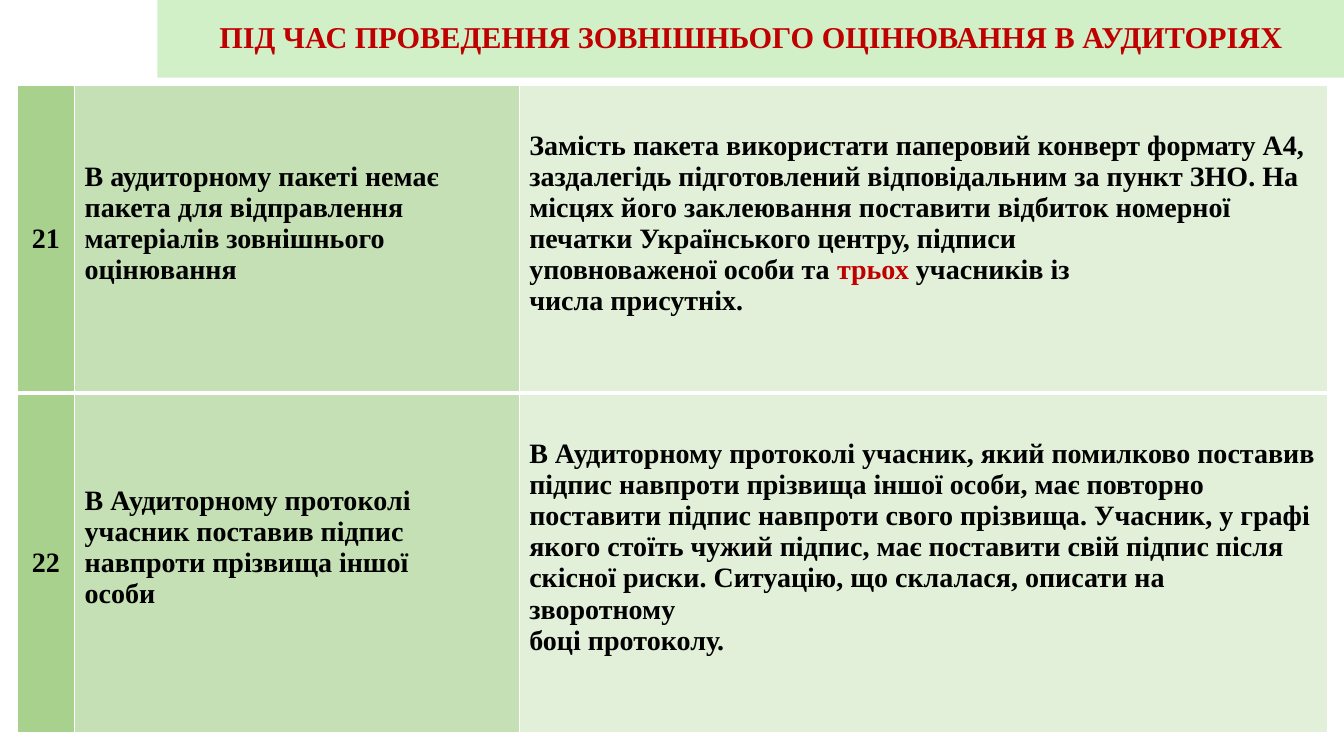
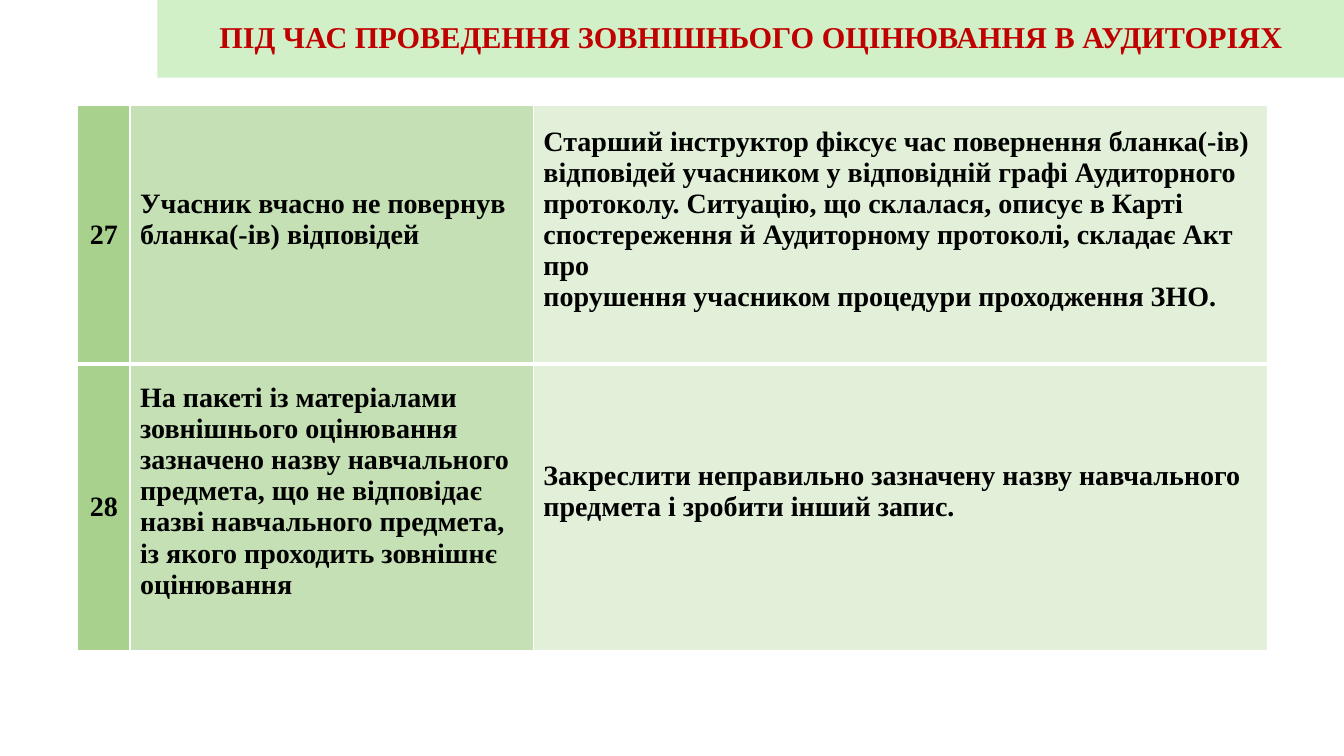
"""Build two slides of exam-room instructions as numbered tables."""
from dataclasses import dataclass

from pptx import Presentation
from pptx.dml.color import RGBColor
from pptx.enum.text import MSO_ANCHOR, MSO_AUTO_SIZE, PP_ALIGN
from pptx.oxml.ns import qn
from pptx.util import Inches, Pt
from lxml.etree import SubElement


@dataclass(frozen=True)
class Theme:
    font: str = "Times New Roman"
    title_size: float = 21.6
    body_size: float = 20
    text: str = "000000"
    accent: str = "C00000"
    band: str = "D1F0C8"
    columns: tuple = ("A9D18E", "C5E0B4", "E2F0D9")
    border: str = "FFFFFF"
    thin: float = 1
    thick: float = 3


THEME = Theme()
TITLE = "ПІД ЧАС ПРОВЕДЕННЯ ЗОВНІШНЬОГО ОЦІНЮВАННЯ В АУДИТОРІЯХ"
TITLE_BOX = (1.56, 0, 11.78, 0.77)
TEXT_BOTTOM_MARGIN = 0.36

# Every second span of a cell is emphasised.
PAGES = [
    {
        "origin": (0.17, 0.85),
        "widths": (0.57, 4.41, 8.02),
        "heights": (3.05, 3.37),
        "rows": [
            (
                ["21"],
                ["В аудиторному пакеті немає\nпакета для відправлення\n"
                 "матеріалів зовнішнього\nоцінювання"],
                ["Замість пакета використати паперовий конверт формату А4, "
                 "заздалегідь підготовлений відповідальним за пункт ЗНО. "
                 "На місцях його заклеювання поставити відбиток номерної "
                 "печатки Українського центру, підписи\n"
                 "уповноваженої особи та ",
                 "трьох ",
                 "учасників із\nчисла присутніх."],
            ),
            (
                ["22"],
                ["В Аудиторному протоколі\nучасник поставив підпис\n"
                 "навпроти прізвища іншої\nособи"],
                ["В Аудиторному протоколі учасник, який помилково поставив "
                 "підпис навпроти прізвища іншої особи, має повторно "
                 "поставити підпис навпроти свого прізвища. Учасник, у графі\n"
                 "якого стоїть чужий підпис, має поставити свій підпис після "
                 "скісної риски. Ситуацію, що склалася, описати на "
                 "зворотному\nбоці протоколу."],
            ),
        ],
    },
    {
        "origin": (0.77, 1.05),
        "widths": (0.52, 4, 7.28),
        "heights": (2.56, 2.84),
        "rows": [
            (
                ["27"],
                ["Учасник вчасно не повернув\nбланка(-ів) відповідей"],
                ["Старший інструктор фіксує час повернення бланка(-ів) "
                 "відповідей учасником у відповідній графі Аудиторного "
                 "протоколу. Ситуацію, що склалася, описує в Карті "
                 "спостереження й Аудиторному протоколі, складає Акт про\n"
                 "порушення учасником процедури проходження ЗНО."],
            ),
            (
                ["28"],
                ["На пакеті із матеріалами\nзовнішнього оцінювання\n"
                 "зазначено назву навчального\nпредмета, що не відповідає\n"
                 "назві навчального предмета, із якого проходить зовнішнє\n"
                 "оцінювання"],
                ["Закреслити неправильно зазначену назву навчального "
                 "предмета і зробити інший запис."],
            ),
        ],
    },
]


def paint(fill, color):
    fill.solid()
    fill.fore_color.rgb = RGBColor.from_string(color)


def style_span(span, size, color):
    span.font.name = THEME.font
    span.font.size = Pt(size)
    span.font.bold = True
    span.font.color.rgb = RGBColor.from_string(color)


def add_title(page):
    box = page.shapes.title
    box.left, box.top, box.width, box.height = map(Inches, TITLE_BOX)
    paint(box.fill, THEME.band)
    frame = box.text_frame
    frame.text = TITLE
    frame.auto_size = MSO_AUTO_SIZE.NONE
    frame.vertical_anchor = MSO_ANCHOR.MIDDLE
    para = frame.paragraphs[0]
    para.alignment = PP_ALIGN.CENTER
    para.line_spacing = 0.9
    style_span(para.runs[0], THEME.title_size, THEME.accent)


def add_borders(cell, top, bottom):
    properties = cell._tc.get_or_add_tcPr()
    sides = {"L": THEME.thin, "R": THEME.thin, "T": top, "B": bottom}
    for side, width in sides.items():
        line = SubElement(properties, qn(f"a:ln{side}"), w=str(Pt(width)))
        fill = SubElement(line, qn("a:solidFill"))
        SubElement(fill, qn("a:srgbClr"), val=THEME.border)


def write_spans(para, spans):
    for index, text in enumerate(spans):
        color = THEME.accent if index % 2 else THEME.text
        for line_number, line in enumerate(text.split("\n")):
            if line_number:
                para.add_line_break()
            span = para.add_run()
            span.text = line
            style_span(span, THEME.body_size, color)


def add_instructions(page, content):
    widths, heights, rows = (content[key] for key in ("widths", "heights", "rows"))
    area = map(Inches, (*content["origin"], sum(widths), sum(heights)))
    table = page.shapes.add_table(len(rows), len(widths), *area).table
    table.first_row = table.horz_banding = False
    for column, width in zip(table.columns, widths):
        column.width = Inches(width)
    for row_index, (row, height, cells) in enumerate(zip(table.rows, heights, rows)):
        row.height = Inches(height)
        top = THEME.thick if row_index == 1 else THEME.thin
        bottom = THEME.thick if row_index == 0 else THEME.thin
        for column_index, (cell, spans) in enumerate(zip(row.cells, cells)):
            add_borders(cell, top, bottom)
            paint(cell.fill, THEME.columns[column_index])
            cell.vertical_anchor = MSO_ANCHOR.MIDDLE
            para = cell.text_frame.paragraphs[0]
            if column_index == 0:
                para.alignment = PP_ALIGN.CENTER
            else:
                cell.margin_bottom = Inches(TEXT_BOTTOM_MARGIN)
            write_spans(para, spans)


def main():
    deck = Presentation()
    deck.slide_width, deck.slide_height = Inches(13.33), Inches(7.5)
    layout = deck.slide_layouts.get_by_name("Title Only")
    for content in PAGES:
        page = deck.slides.add_slide(layout)
        add_title(page)
        add_instructions(page, content)
    deck.save("out.pptx")


if __name__ == "__main__":
    main()
